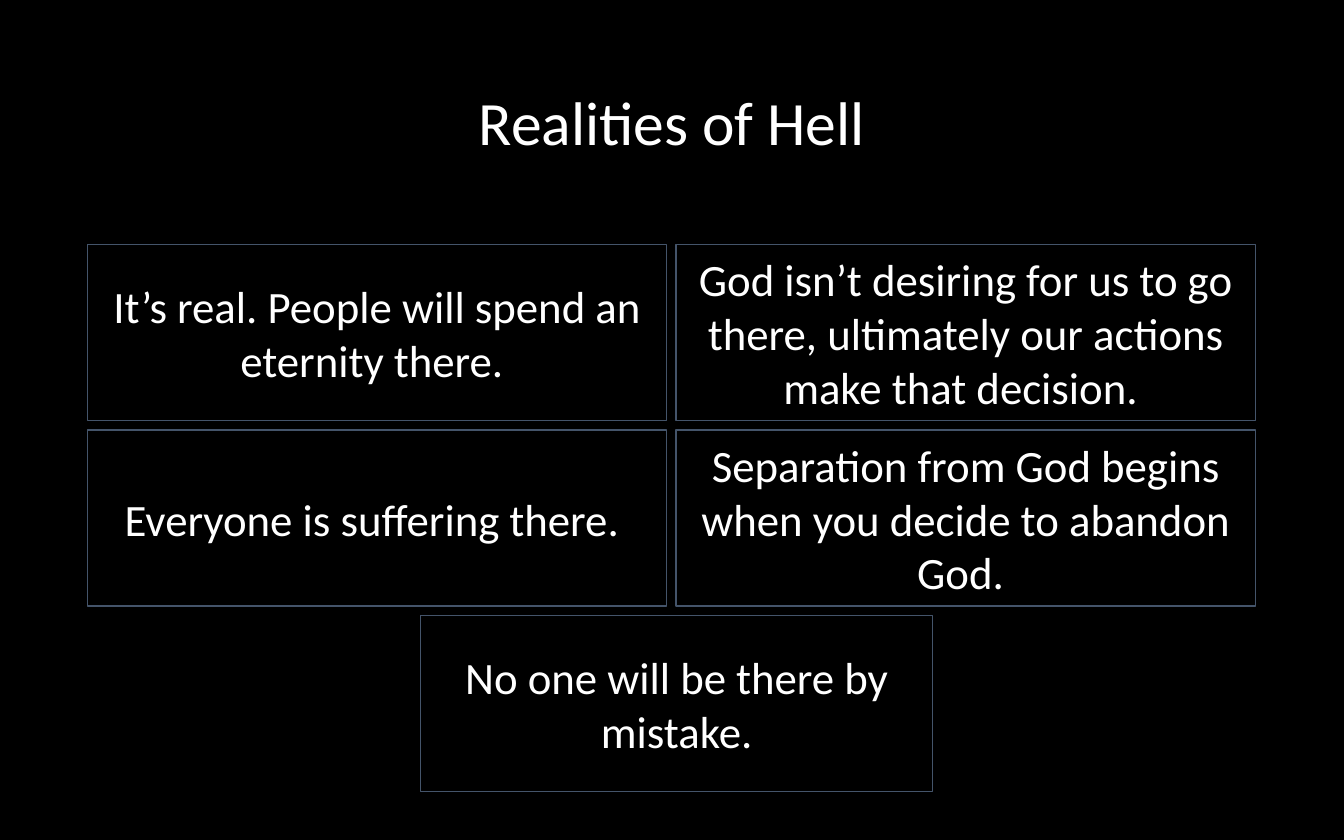
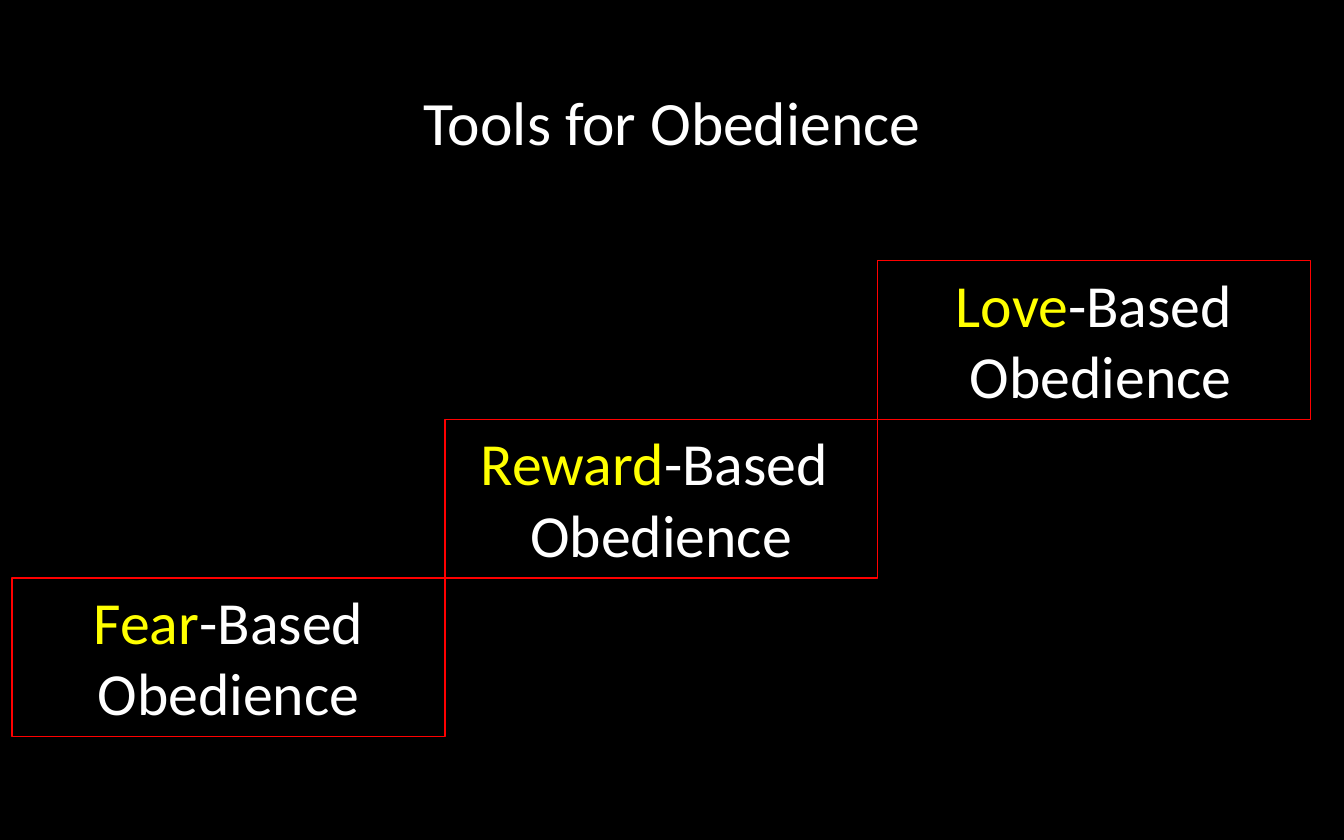
import pptx
import pptx.util
import pptx.dml.color
import pptx.enum.shapes
import pptx.enum.text

Inches, Pt = pptx.util.Inches, pptx.util.Pt
RGB = pptx.dml.color.RGBColor
Anchor = pptx.enum.text.MSO_ANCHOR

# Content
FACTS_TITLE = "Realities of Hell"
FACTS = [  # row by row; the last one stands alone
    "It’s real. People will spend an eternity there. ",
    "God isn’t desiring for us to go there, ultimately our actions make that decision. ",
    "Everyone is suffering there. ",
    "Separation from God begins when you decide to abandon God. ",
]
LAST_FACT = "No one will be there by mistake."
TOOLS_TITLE = "Tools for Obedience"
TOOLS = [  # key word, rest of its paragraph, further paragraphs
    ("Fear", "-Based Obedience"),
    ("Reward", "-Based ", "Obedience"),
    ("Love", "-Based", " Obedience"),
]

# Style
FONT = "Calibri"
BLACK = RGB(0, 0, 0)
WHITE = RGB(255, 255, 255)
YELLOW = RGB(255, 255, 0)
RED = RGB(255, 0, 0)
SLATE = RGB(0x44, 0x54, 0x6A)

# Grids, in inches
WIDTH, HEIGHT = 10, 6.25
FACT_W, FACT_H = 4.31, 1.31
FACT_LEFT, FACT_TOP = 0.65, 1.82
COL_STEP, ROW_STEP = 4.38, 1.38
LAST_LEFT, LAST_W = 3.13, 3.81
STEP_W, STEP_H = 3.22, 1.18
STEP_LEFT, STEP_TOP = 0.09, 4.3


def write(shape, *paras, size=24, anchor=Anchor.MIDDLE, spacing=None):
    """Fill a shape with paragraphs, each a list of (text, colour) runs."""
    frame = shape.text_frame
    frame.word_wrap = True
    frame.vertical_anchor = anchor
    for i, runs in enumerate(paras):
        para = frame.add_paragraph() if i else frame.paragraphs[0]
        para.alignment = pptx.enum.text.PP_ALIGN.CENTER
        para.line_spacing = spacing
        for text, color in runs:
            run = para.add_run()
            run.text = text
            run.font.name, run.font.size = FONT, Pt(size)
            run.font.color.rgb = color


def add_box(slide, left, top, width, height, color):
    box = slide.shapes.add_shape(
        pptx.enum.shapes.MSO_SHAPE.RECTANGLE,
        Inches(left), Inches(top), Inches(width), Inches(height))
    box.shadow.inherit = False
    box.fill.background()
    box.line.color.rgb = color
    box.line.width = Pt(0.75)
    return box


def add_slide(deck, text):
    slide = deck.slides.add_slide(deck.slide_layouts[5])
    title = slide.shapes.title
    title.left, title.top = Inches(0.69), Inches(0.33)
    title.width, title.height = Inches(8.62), Inches(1.21)
    write(title, [(text, WHITE)], size=33, spacing=0.9)
    return slide


def add_facts(deck):
    slide = add_slide(deck, FACTS_TITLE)
    for i, fact in enumerate(FACTS):
        row, col = divmod(i, 2)
        box = add_box(slide, FACT_LEFT + col * COL_STEP,
                      FACT_TOP + row * ROW_STEP, FACT_W, FACT_H, SLATE)
        write(box, [(fact, WHITE)])
    box = add_box(slide, LAST_LEFT, FACT_TOP + 2 * ROW_STEP,
                  LAST_W, FACT_H, SLATE)
    write(box, [(LAST_FACT, WHITE)])


def add_tools(deck):
    slide = add_slide(deck, TOOLS_TITLE)
    # Stairs rising to the right
    for i, (key, rest, *more) in enumerate(TOOLS):
        box = add_box(slide, STEP_LEFT + i * STEP_W, STEP_TOP - i * STEP_H,
                      STEP_W, STEP_H, RED)
        write(box, [(key, YELLOW), (rest, WHITE)],
              *[[(text, WHITE)] for text in more],
              size=32, anchor=Anchor.TOP)
        box.text_frame.auto_size = pptx.enum.text.MSO_AUTO_SIZE.SHAPE_TO_FIT_TEXT


def main():
    deck = pptx.Presentation()
    deck.slide_width, deck.slide_height = Inches(WIDTH), Inches(HEIGHT)
    back = deck.slide_master.background.fill
    back.solid()
    back.fore_color.rgb = BLACK
    add_facts(deck)
    add_tools(deck)
    deck.save("out.pptx")


if __name__ == "__main__":
    main()
